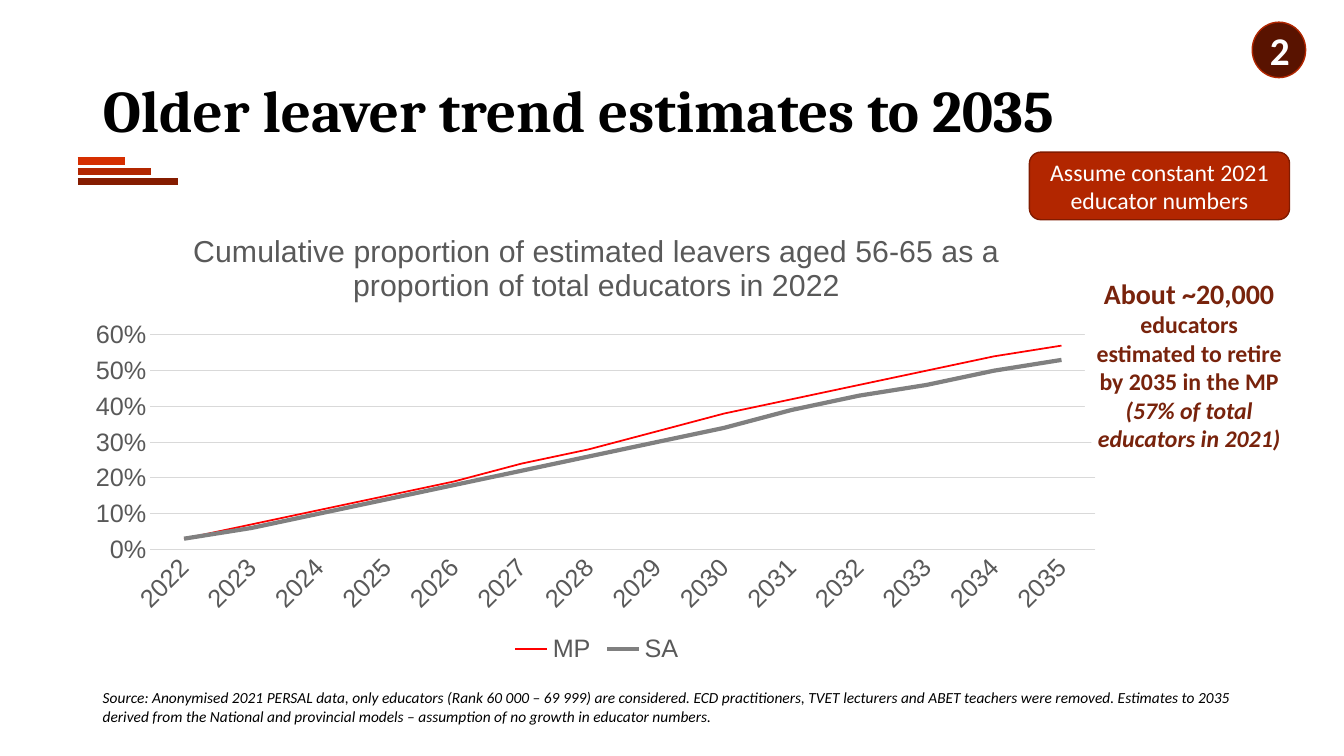
import pptx
import pptx.util
import pptx.chart.data
import pptx.dml.color
import pptx.enum.chart
import pptx.enum.shapes
import pptx.enum.text
import pptx.oxml
import pptx.oxml.ns

Inch, Pt = pptx.util.Inches, pptx.util.Pt
Shape = pptx.enum.shapes.MSO_SHAPE
Align = pptx.enum.text.PP_ALIGN
Mid = pptx.enum.text.MSO_ANCHOR.MIDDLE
qn = pptx.oxml.ns.qn

hues = {
    "black": "000000", "white": "FFFFFF", "gray": "595959", "grid": "D9D9D9",
    "dark": "851C00", "rust": "B22600", "flame": "D62E00", "edge": "811B00",
    "deep": "591300", "brown": "78230C", "red": "FF0000", "steel": "808080",
}


def color(name):
    return pptx.dml.color.RGBColor.from_string(hues[name])


def style(font, size, hue, face="Calibri", bold=False, slant=False):
    font.size, font.name = Pt(size), face
    font.bold, font.italic = bold, slant
    font.color.rgb = color(hue)


deck = pptx.Presentation()
deck.slide_width, deck.slide_height = Inch(13.33), Inch(7.5)
slide = deck.slides.add_slide(deck.slide_layouts[5])
shapes = slide.shapes

# Title
title = shapes.title
title.left, title.top = Inch(0.92), Inch(0.4)
title.width, title.height = Inch(11.5), Inch(1.45)
frame = title.text_frame
frame.text = "Older leaver trend estimates to 2035"
frame.auto_size = pptx.enum.text.MSO_AUTO_SIZE.NONE
frame.vertical_anchor = Mid
para = frame.paragraphs[0]
para.alignment, para.line_spacing = Align.LEFT, 0.9
style(para.runs[0].font, 42, "black", "Cambria", bold=True)

# Stepped bars under the title
for step, (width, hue) in enumerate([(0.47, "flame"), (0.73, "rust"), (1, "dark")]):
    y = Inch(1.6 + 0.1 * step)
    bar = shapes.add_connector(pptx.enum.shapes.MSO_CONNECTOR.STRAIGHT,
                               Inch(0.77), y, Inch(0.77 + width), y)
    bar.line.color.rgb, bar.line.width = color(hue), Pt(5.5)
    bar._element.spPr.append(pptx.oxml.parse_xml(
        '<a:effectLst xmlns:a="http://schemas.openxmlformats.org/drawingml/2006/main"/>'))

# Source note
note = shapes.add_textbox(Inch(0.92), Inch(6.83), Inch(11.72), Inch(0.37))
frame = note.text_frame
frame.word_wrap, frame.vertical_anchor = True, Mid
frame.text = (
    "Source: Anonymised 2021 PERSAL data, only educators (Rank 60 000 – 69 999) "
    "are considered. ECD practitioners, TVET lecturers and ABET teachers were removed. "
    "Estimates to 2035 derived from the National and provincial models – "
    "assumption of no growth in educator numbers.")
style(frame.paragraphs[0].runs[0].font, 11, "black", slant=True)

# Chart data
lines = {
    "MP": ([3, 7, 11, 15, 19, 24, 28, 33, 38, 42, 46, 50, 54, 57], "red", 1.25),
    "SA": ([3, 6, 10, 14, 18, 22, 26, 30, 34, 39, 43, 46, 50, 53], "steel", 3),
}
data = pptx.chart.data.CategoryChartData(number_format="0%")
data.categories = [str(year) for year in range(2022, 2036)]
for name, (shares, hue, width) in lines.items():
    data.add_series(name, [share / 100 for share in shares])
chart = shapes.add_chart(pptx.enum.chart.XL_CHART_TYPE.LINE, Inch(0.77), Inch(2.1),
                         Inch(10.3), Inch(4.53), data).chart
style(chart.font, 18, "gray", "Arial")
chart.plots[0].vary_by_categories = False
for row in chart.plots[0].series:
    shares, hue, width = lines[row.name]
    row.smooth = False
    row.marker.style = pptx.enum.chart.XL_MARKER_STYLE.NONE
    row.format.line.color.rgb, row.format.line.width = color(hue), Pt(width)

# Chart title and legend
chart.has_title = True
frame = chart.chart_title.text_frame
frame.text = ("Cumulative proportion of estimated leavers aged 56-65 as a "
              "proportion of total educators in 2022")
style(frame.paragraphs[0].runs[0].font, 21.6, "gray", "Arial")
chart.chart_title.include_in_layout = False
chart.has_legend = True
chart.legend.position = pptx.enum.chart.XL_LEGEND_POSITION.BOTTOM
chart.legend.include_in_layout = False
style(chart.legend.font, 18, "gray", "Arial")

# Axes
years, rates = chart.category_axis, chart.value_axis
for axis in (years, rates):
    axis.major_tick_mark = axis.minor_tick_mark = pptx.enum.chart.XL_TICK_MARK.NONE
    style(axis.tick_labels.font, 18, "gray", "Arial")
years._element.find(qn("c:txPr")).find(qn("a:bodyPr")).set("rot", "-2700000")
rates.minimum_scale, rates.maximum_scale, rates.major_unit = 0, 0.6, 0.1
rates.tick_labels.number_format = "0%"
rates.tick_labels.number_format_is_linked = False
rates.format.line.fill.background()
rates.has_major_gridlines = True
for rule in (years.format.line, rates.major_gridlines.format.line):
    rule.color.rgb, rule.width = color("grid"), Pt(0.75)

# Plot area as shares of the chart
area = chart._chartSpace.chart.plotArea
for old in area.findall(qn("c:layout")):
    area.remove(old)
marks = "".join(f'<c:{tag} val="{val}"/>' for tag, val in [
    ("layoutTarget", "inner"), ("xMode", "edge"), ("yMode", "edge"),
    ("x", 0.07), ("y", 0.27), ("w", 0.91), ("h", 0.47)])
area.insert(0, pptx.oxml.parse_xml(
    '<c:layout xmlns:c="http://schemas.openxmlformats.org/drawingml/2006/chart">'
    f"<c:manualLayout>{marks}</c:manualLayout></c:layout>"))

# Assumption, callout and page badge: kind, box, fill, edge, paragraphs
cards = [
    (Shape.ROUNDED_RECTANGLE, (10.21, 1.51, 2.58, 0.67), "rust", "edge",
     [("Assume constant 2021 educator numbers", 17, "white", False, False)]),
    (Shape.ROUNDED_RECTANGLE, (10.76, 2.73, 2.07, 1.77), "white", None,
     [("About ~20,000", 20, "brown", True, False),
      ("educators estimated to retire by 2035 in the MP", 17, "brown", True, False),
      ("(57% of total educators in 2021)", 17, "brown", True, True)]),
    (Shape.OVAL, (12.42, 0.22, 0.53, 0.55), "deep", "rust",
     [("2", 28, "white", True, False)]),
]
for kind, box, fill, edge, texts in cards:
    card = shapes.add_shape(kind, *map(Inch, box))
    card.shadow.inherit = False
    card.fill.solid()
    card.fill.fore_color.rgb = color(fill)
    frame = card.text_frame
    frame.word_wrap, frame.vertical_anchor = True, Mid
    if edge:
        card.line.color.rgb, card.line.width = color(edge), Pt(1)
    else:
        card.line.fill.background()
        frame.margin_left = frame.margin_right = 0
        frame.margin_top = frame.margin_bottom = 0
    frame.text = "\n".join(text[0] for text in texts)
    for para, (words, size, hue, bold, slant) in zip(frame.paragraphs, texts):
        para.alignment = Align.CENTER
        style(para.runs[0].font, size, hue, bold=bold, slant=slant)

deck.save("out.pptx")
